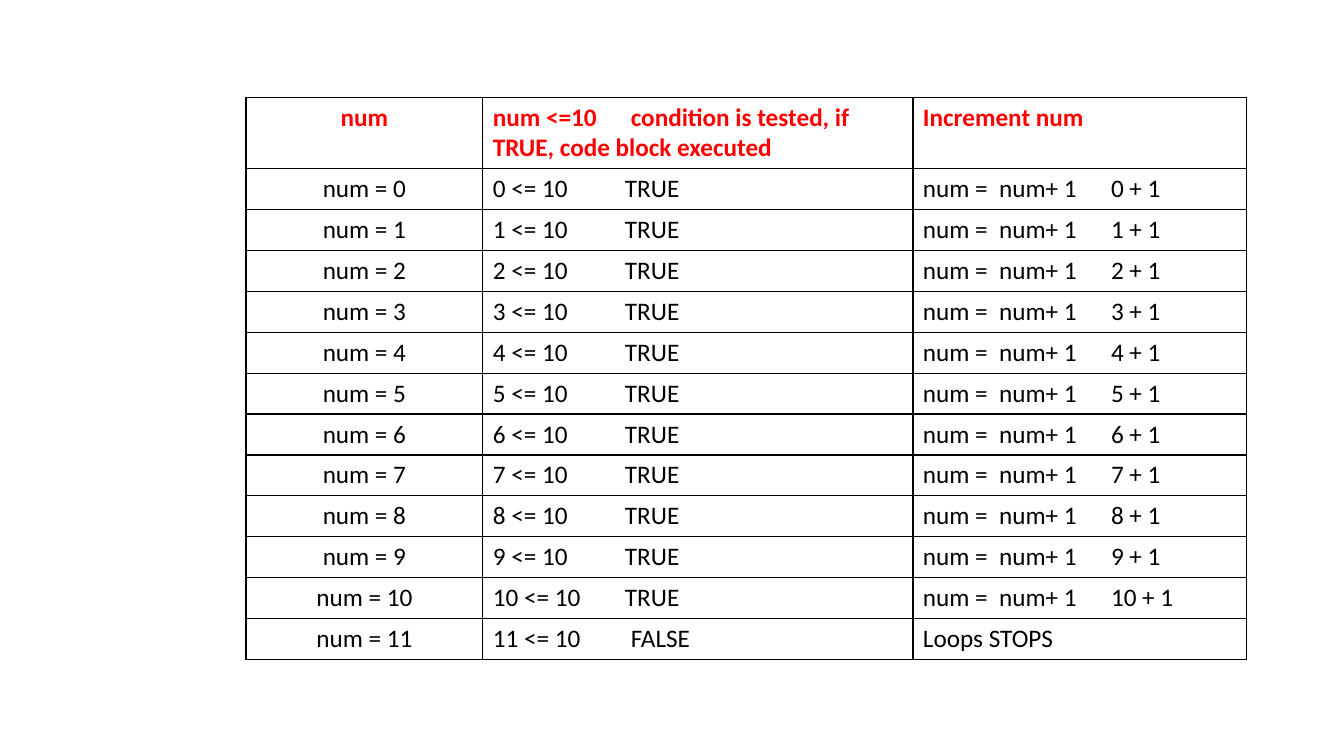
from lxml.etree import SubElement as Sub
from pptx import Presentation
from pptx.dml.color import RGBColor
from pptx.enum.text import PP_ALIGN as Align
from pptx.oxml.ns import qn
from pptx.util import Pt

COLUMN_WIDTHS = (169.2, 307.2, 238.4)
HEADER_HEIGHT, ROW_HEIGHT = 50.8, 29.2
LIMIT = 10
HEADER = ("num", "num <=10\tcondition is tested, if TRUE, code block executed", "Increment num")


def rgb(code):
    """Turn a hex string into a colour."""
    return RGBColor.from_string(code)


def trace_row(num):
    """Return the three cell texts for one pass of the loop."""
    holds = num <= LIMIT
    increment = f"num =  num+ 1\t{num} + 1" if holds else "Loops STOPS"
    return f"num = {num}", f"{num} <= {LIMIT}\t{str(holds).upper()}", increment


def add_tab_stop(para, position):
    """Give a paragraph one left tab stop."""
    stops = Sub(para._p.get_or_add_pPr(), qn("a:tabLst"))
    Sub(stops, qn("a:tab"), pos=str(Pt(position)), algn="l")


def add_borders(cell, color, width):
    """Draw a solid line on all four sides of a cell."""
    properties = cell._tc.get_or_add_tcPr()
    for side in ("lnL", "lnR", "lnT", "lnB"):
        line = Sub(properties, qn(f"a:{side}"), w=str(Pt(width)))
        Sub(Sub(line, qn("a:solidFill")), qn("a:srgbClr"), val=color)


def fill_cell(cell, text, color, bold, align, tab_stop):
    """Write and format one table cell."""
    add_borders(cell, "000000", 1)
    cell.fill.background()
    cell.text = text
    para = cell.text_frame.paragraphs[0]
    para.alignment = align
    if "\t" in text:
        add_tab_stop(para, tab_stop)
    para.font.name = "Calibri"
    para.font.size = Pt(18)
    para.font.bold = bold
    para.font.color.rgb = rgb(color)


def add_trace_table(page, left, top):
    """Place the loop trace table with its top left corner at the given point."""
    rows = [HEADER] + [trace_row(num) for num in range(LIMIT + 2)]
    height = HEADER_HEIGHT + ROW_HEIGHT * (len(rows) - 1)
    frame = page.shapes.add_table(len(rows), len(COLUMN_WIDTHS), Pt(left), Pt(top),
                                  Pt(sum(COLUMN_WIDTHS)), Pt(height))
    table = frame.table
    table.first_row = table.horz_banding = False
    for column, width in zip(table.columns, COLUMN_WIDTHS):
        column.width = Pt(width)
    for index, texts in enumerate(rows):
        is_header = index == 0
        is_last = index == len(rows) - 1
        table.rows[index].height = Pt(HEADER_HEIGHT if is_header else ROW_HEIGHT)
        test_stop = 98.5 if is_header or is_last else 94.3
        color = "FF0000" if is_header else "000000"
        for column, text in enumerate(texts):
            align = Align.LEFT if column else Align.CENTER
            tab_stop = (0, test_stop, 134.3)[column]
            fill_cell(table.cell(index, column), text, color, is_header, align, tab_stop)


def main():
    """Build the deck and save it."""
    deck = Presentation()
    deck.slide_width, deck.slide_height = Pt(960), Pt(540)
    page = deck.slides.add_slide(deck.slide_layouts[6])
    page.background.fill.solid()
    page.background.fill.fore_color.rgb = rgb("FFFFFF")
    add_trace_table(page, 175.7, 69.4)
    deck.save("out.pptx")


if __name__ == "__main__":
    main()
